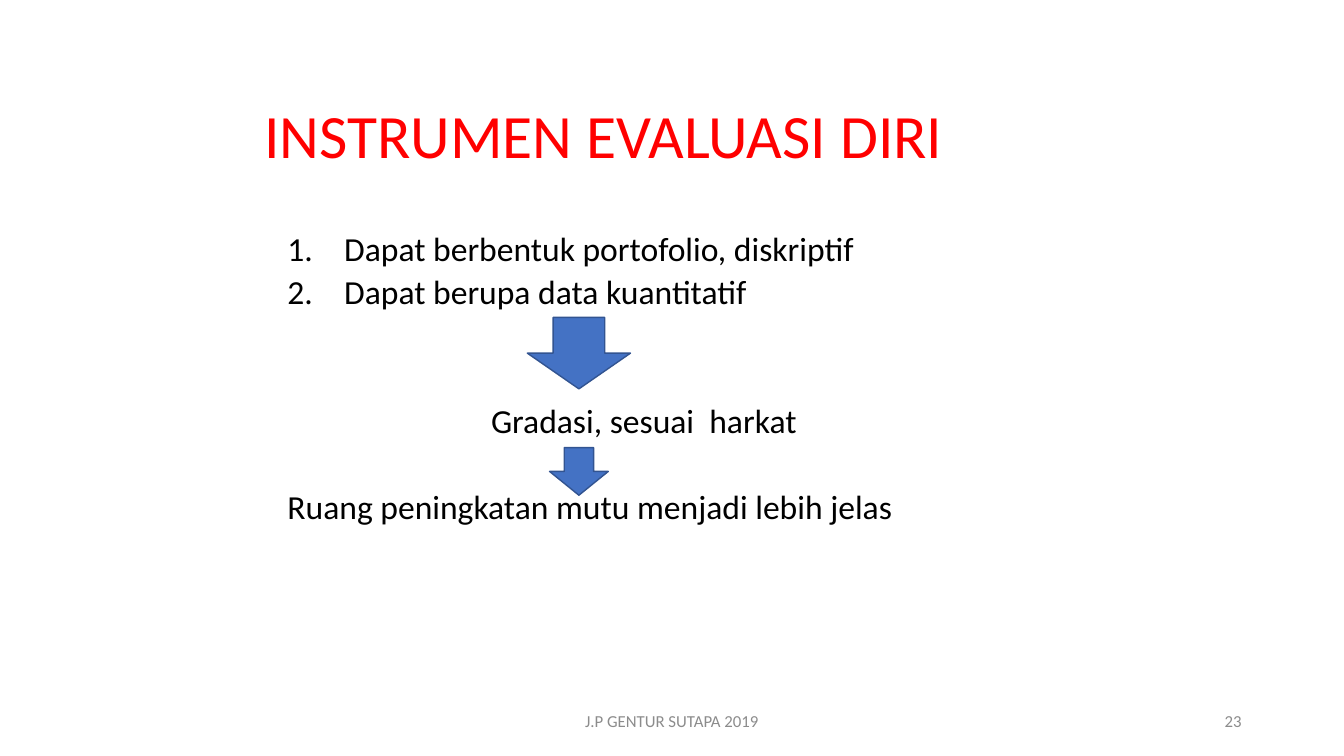
from lxml import etree
from pptx import Presentation
from pptx import util as u
from pptx.dml import color
from pptx.enum import shapes, text
from pptx.oxml import ns

FONT = "Calibri"
RED, BLACK, GREY = "FF0000", "000000", "8C8C8C"
BLUE, DARK_BLUE = "4472C4", "325491"


def rgb(value):
    return color.RGBColor.from_string(value)


def write(paragraph, content, size, colour, align=text.PP_ALIGN.LEFT, spacing=None, before=0):
    run = paragraph.add_run()
    run.text = content
    run.font.name = FONT
    run.font.size = u.Pt(size)
    run.font.color.rgb = rgb(colour)
    paragraph.alignment = align
    paragraph.line_spacing = spacing
    paragraph.space_before = u.Pt(before)


def place(shape, box):
    shape.left, shape.top, shape.width, shape.height = (u.Cm(length) for length in box)


def set_marker(paragraph, margin, hanging=0, numbered=False):
    """Set the indents in centimetres, with automatic numbers or no bullet."""
    properties = paragraph._p.get_or_add_pPr()
    properties.set("marL", str(u.Cm(margin)))
    properties.set("indent", str(u.Cm(-hanging)))
    if numbered:
        etree.SubElement(properties, ns.qn("a:buFont")).set("typeface", "+mj-lt")
        etree.SubElement(properties, ns.qn("a:buAutoNum")).set("type", "arabicPeriod")
    else:
        etree.SubElement(properties, ns.qn("a:buNone"))


def add_title(slide, box):
    title = slide.shapes.title
    place(title, box)
    title.text_frame.auto_size = text.MSO_AUTO_SIZE.NONE
    title.text_frame.vertical_anchor = text.MSO_ANCHOR.MIDDLE
    write(title.text_frame.paragraphs[0], "INSTRUMEN EVALUASI DIRI", 44, RED, spacing=0.9)


def add_arrow(slide, box):
    arrow = slide.shapes.add_shape(shapes.MSO_SHAPE.DOWN_ARROW, 0, 0, 0, 0)
    place(arrow, box)
    arrow.shadow.inherit = False
    arrow.fill.solid()
    arrow.fill.fore_color.rgb = rgb(BLUE)
    arrow.line.color.rgb = rgb(DARK_BLUE)
    arrow.line.width = u.Pt(1)


def add_steps(slide, box):
    """Fill the body and put the arrows between its steps."""
    body = slide.placeholders[1]
    place(body, box)
    frame = body.text_frame
    frame.auto_size = text.MSO_AUTO_SIZE.NONE
    frame.vertical_anchor = text.MSO_ANCHOR.TOP
    steps = [
        ("Dapat berbentuk portofolio, diskriptif", 5, dict(margin=2.7, hanging=1.43, numbered=True)),
        ("Dapat berupa data kuantitatif", 5, dict(margin=2.7, hanging=1.43, numbered=True)),
        ("Gradasi, sesuai  harkat", 66, dict(margin=6.4)),
        ("Ruang peningkatan mutu menjadi lebih jelas", 36, dict(margin=1.27)),
    ]
    for index, (content, before, marker) in enumerate(steps):
        paragraph = frame.add_paragraph() if index else frame.paragraphs[0]
        paragraph.level = 1
        write(paragraph, content, 24, BLACK, spacing=0.9, before=before)
        set_marker(paragraph, **marker)

    left, top = box[:2]
    centre = left + 8.87
    for offset, width, height in ((2.28, 2.6, 1.8), (5.56, 1.48, 1.2)):
        add_arrow(slide, (centre - width / 2, top + offset, width, height))


def add_footer_text(slide, box, content, align):
    footer = slide.shapes.add_textbox(0, 0, 0, 0)
    place(footer, box)
    footer.text_frame.word_wrap = True
    footer.text_frame.vertical_anchor = text.MSO_ANCHOR.MIDDLE
    write(footer.text_frame.paragraphs[0], content, 12, GREY, align=align)


def main():
    presentation = Presentation()
    presentation.slide_width, presentation.slide_height = u.Cm(33.87), u.Cm(19.05)
    slide = presentation.slides.add_slide(presentation.slide_layouts[1])
    add_title(slide, (6.4, 1.9, 22.86, 3.18))
    add_steps(slide, (5.72, 5.72, 22.86, 12.57))
    add_footer_text(slide, (11.22, 17.66, 11.43, 1.01), "J.P GENTUR SUTAPA 2019", text.PP_ALIGN.CENTER)
    add_footer_text(slide, (23.92, 17.66, 7.62, 1.01), "23", text.PP_ALIGN.RIGHT)
    presentation.save("out.pptx")


if __name__ == "__main__":
    main()
